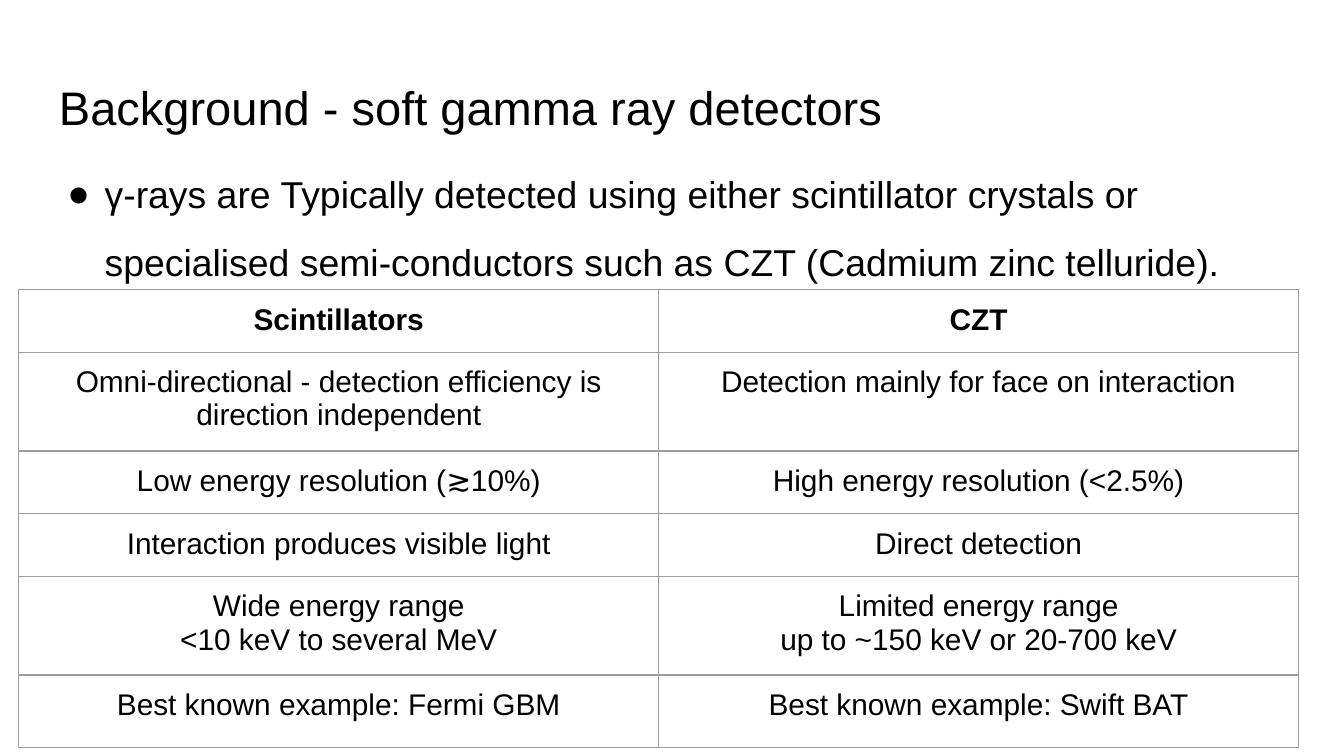
from lxml.etree import SubElement
from pptx import Presentation
from pptx.dml.color import RGBColor as RGB
from pptx.enum.text import MSO_ANCHOR as ANCHOR, PP_ALIGN as ALIGN
from pptx.oxml.ns import qn
from pptx.util import Pt

TITLE = "Background - soft gamma ray detectors"
POINT = ("γ-rays are Typically detected using either scintillator crystals or "
         "specialised semi-conductors such as CZT (Cadmium zinc telluride).")
ROWS = [  # height, scintillators, CZT
    (31, "Scintillators", "CZT"),
    (50, "Omni-directional - detection efficiency is direction independent",
     "Detection mainly for face on interaction"),
    (31, "Low energy resolution (≳10%)", "High energy resolution (<2.5%)"),
    (31, "Interaction produces visible light", "Direct detection"),
    (50, "Wide energy range\v<10 keV to several MeV",
     "Limited energy range\vup to ~150 keV or 20-700 keV"),
    (39, "Best known example: Fermi GBM", "Best known example: Swift BAT"),
]
COLORS = {"text": "000000", "grid": "9E9E9E", "page": "FFFFFF"}
FONT = "Arial"
PAD = 7.2
LEFT, WIDTH = 24.5, 671
GRID_LEFT, GRID_TOP, COL = 10.1, 155.2, 342.8


def style(frame, size, bold=False):
    for par in frame.paragraphs:
        for run in par.runs:
            font = run.font
            font.name, font.size, font.bold = FONT, Pt(size), bold
            font.color.rgb = RGB.from_string(COLORS["text"])


def add_text(slide, text, top, height, size):
    box = slide.shapes.add_textbox(Pt(LEFT), Pt(top), Pt(WIDTH), Pt(height))
    frame = box.text_frame
    frame.word_wrap = True
    frame.vertical_anchor = ANCHOR.TOP
    frame.margin_left = frame.margin_right = Pt(PAD)
    frame.margin_top = frame.margin_bottom = Pt(PAD)
    frame.text = text
    style(frame, size)
    return frame.paragraphs[0]


def add_bullet(par, indent, hang):
    props = par._p.get_or_add_pPr()
    props.set("marL", str(Pt(indent)))
    props.set("indent", str(-Pt(hang)))
    tint = SubElement(props, qn("a:buClr"))
    SubElement(tint, qn("a:srgbClr"), val=COLORS["text"])
    SubElement(props, qn("a:buFont"), typeface=FONT)
    SubElement(props, qn("a:buChar"), char="●")


def add_border(cell):
    props = cell._tc.get_or_add_tcPr()
    for side in ("lnL", "lnR", "lnT", "lnB"):
        line = SubElement(props, qn("a:" + side), w=str(Pt(0.75)))
        fill = SubElement(line, qn("a:solidFill"))
        SubElement(fill, qn("a:srgbClr"), val=COLORS["grid"])


def add_grid(slide):
    high = sum(row[0] for row in ROWS)
    table = slide.shapes.add_table(len(ROWS), 2, Pt(GRID_LEFT), Pt(GRID_TOP),
                                   Pt(2 * COL), Pt(high)).table
    table.first_row = table.horz_banding = False
    for col in table.columns:
        col.width = Pt(COL)
    for r, (height, *texts) in enumerate(ROWS):
        table.rows[r].height = Pt(height)
        for c, text in enumerate(texts):
            cell = table.cell(r, c)
            cell.margin_left = cell.margin_right = Pt(PAD)
            cell.margin_top = cell.margin_bottom = Pt(PAD)
            add_border(cell)
            cell.fill.background()
            cell.text_frame.text = text
            cell.text_frame.paragraphs[0].alignment = ALIGN.CENTER
            style(cell.text_frame, 16, bold=r == 0)


def main():
    deck = Presentation()
    deck.slide_width, deck.slide_height = Pt(720), Pt(405)
    slide = deck.slides.add_slide(deck.slide_layouts[6])
    back = slide.background.fill
    back.solid()
    back.fore_color.rgb = RGB.from_string(COLORS["page"])

    add_text(slide, TITLE, top=35, height=45, size=25.2)
    point = add_text(slide, POINT, top=72.7, height=269, size=20)
    point.line_spacing = 1.5
    add_bullet(point, indent=24.5, hang=20)
    add_grid(slide)
    deck.save("out.pptx")


if __name__ == "__main__":
    main()
